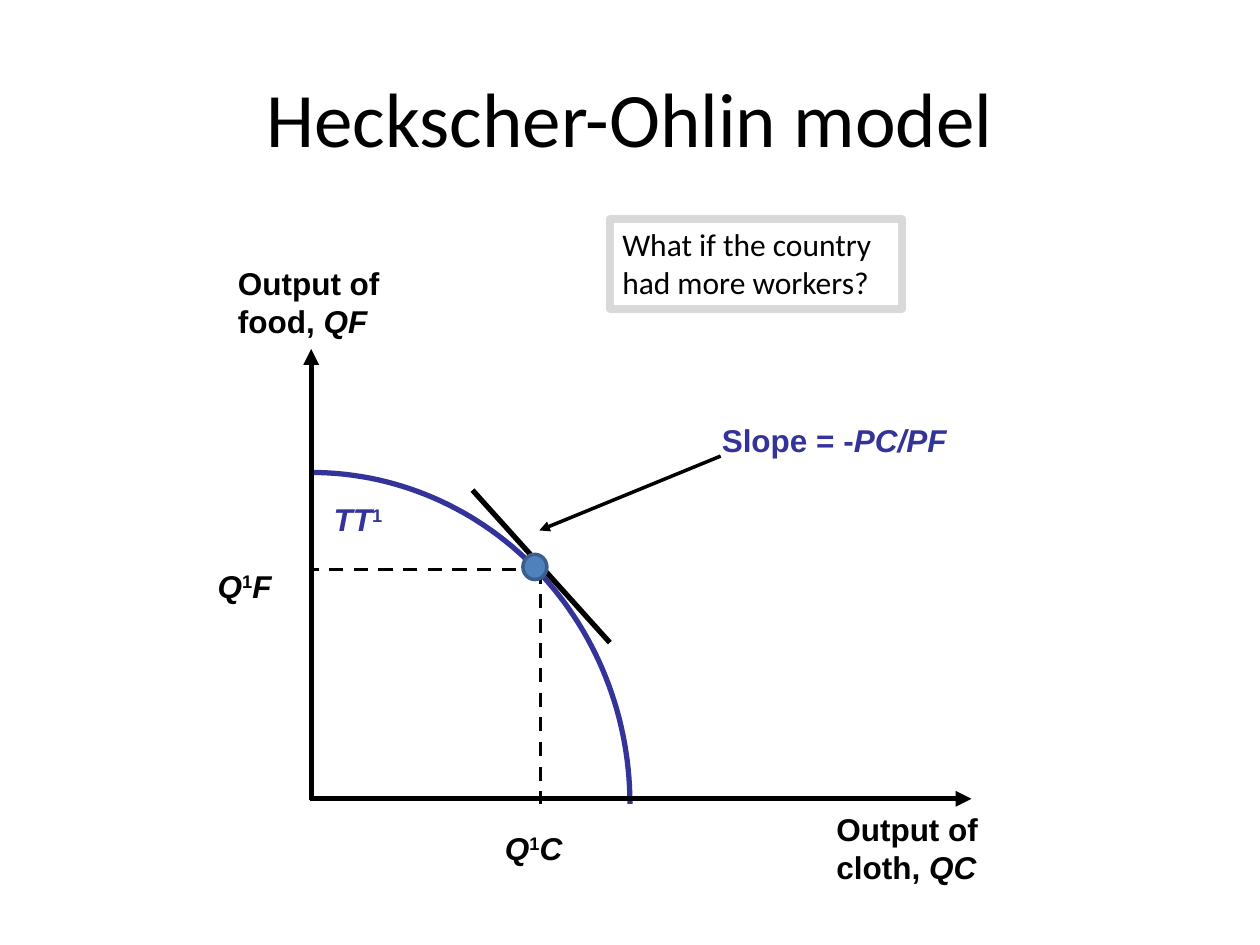
import math
from dataclasses import dataclass

from pptx import Presentation
from pptx import util as u
from pptx.dml.color import RGBColor
from pptx.enum import dml, shapes, text
from pptx.oxml import ns, xmlchemy

BLACK = RGBColor(0x00, 0x00, 0x00)
INDIGO = RGBColor(0x33, 0x33, 0x99)
BLUE = RGBColor(0x4F, 0x81, 0xBD)
DARK_BLUE = RGBColor(0x3A, 0x5F, 0x8C)
GREY = RGBColor(0xD9, 0xD9, 0xD9)

ORIGIN_X, ORIGIN_Y = 2.47, 6.34
CURVE_WIDTH, CURVE_HEIGHT, CURVE_BASE = 2.53, 2.63, 6.38
CURVE_SEGMENTS = 60
OPTIMUM_X, OPTIMUM_Y = 4.29, 4.52


@dataclass(frozen=True)
class Part:
    words: str
    italic: bool = False
    superscript: bool = False


@dataclass(frozen=True)
class Label:
    box: tuple[float, float, float, float]
    lines: tuple[tuple[Part, ...], ...]
    color: RGBColor = BLACK
    wrap: bool = True
    font: str = "Arial"
    bold: bool = True


@dataclass(frozen=True)
class Line:
    start: tuple[float, float]
    end: tuple[float, float]
    width: float
    arrow: bool = False
    dashed: bool = False


ONE = Part("1", superscript=True)

LABELS = (
    Label((2.55, 3.92, 0.6, 0.4), ((Part("TT", True), ONE),), INDIGO, wrap=False),
    Label((1.79, 2.05, 1.42, 0.7),
          ((Part("Output of"),), (Part("food, "), Part("QF", True)))),
    Label((6.54, 6.38, 1.5, 0.7),
          ((Part("Output of"),), (Part("cloth, "), Part("QC", True)))),
    Label((5.63, 3.29, 2.22, 0.4),
          ((Part("Slope = -"), Part("PC/PF", True)),), INDIGO),
    Label((1.63, 4.45, 0.67, 0.4), ((Part("Q", True), ONE, Part("F", True)),)),
    Label((3.91, 6.53, 0.76, 0.4), ((Part("Q", True), ONE, Part("C", True)),)),
)

QUESTION = Label((4.84, 1.74, 2.32, 0.71),
                 ((Part("What if the country had more workers?"),),),
                 font="Calibri", bold=False)

LINES = (
    Line((ORIGIN_X, 6.35), (ORIGIN_X, 2.77), 3, arrow=True),
    Line((2.46, ORIGIN_Y), (7.71, ORIGIN_Y), 3, arrow=True),
    Line((5.72, 3.62), (4.28, 4.21), 2, arrow=True),
    Line((OPTIMUM_X, OPTIMUM_Y), (OPTIMUM_X, CURVE_BASE), 2, dashed=True),
    Line((OPTIMUM_X, OPTIMUM_Y), (2.49, OPTIMUM_Y), 2, dashed=True),
    Line((3.75, 3.89), (4.84, 5.1), 3),
)


def inches(*lengths: float) -> list[u.Length]:
    return [u.Inches(length) for length in lengths]


def draw_title(slide, words: str) -> None:
    title = slide.shapes.title
    title.left, title.top, title.width, title.height = inches(0.5, 0.3, 9, 1.25)
    title.text_frame.text = words
    title.text_frame.vertical_anchor = text.MSO_ANCHOR.MIDDLE
    paragraph = title.text_frame.paragraphs[0]
    paragraph.alignment = text.PP_ALIGN.CENTER
    paragraph.font.name = "Calibri"
    paragraph.font.size = u.Pt(44)
    paragraph.font.color.rgb = BLACK


def draw_label(slide, label: Label):
    shape = slide.shapes.add_textbox(*inches(*label.box))
    frame = shape.text_frame
    frame.word_wrap = label.wrap
    frame.auto_size = text.MSO_AUTO_SIZE.SHAPE_TO_FIT_TEXT
    for index, parts in enumerate(label.lines):
        paragraph = frame.add_paragraph() if index else frame.paragraphs[0]
        paragraph.font.name = label.font
        paragraph.font.size = u.Pt(18)
        paragraph.font.bold = label.bold
        paragraph.font.color.rgb = label.color
        for part in parts:
            run = paragraph.add_run()
            run.text = part.words
            run.font.italic = part.italic
            if part.superscript:
                run._r.get_or_add_rPr().set("baseline", "30000")
    return shape


def draw_line(slide, line: Line) -> None:
    connector = slide.shapes.add_connector(
        shapes.MSO_CONNECTOR.STRAIGHT, *inches(*line.start, *line.end))
    connector.line.color.rgb = BLACK
    connector.line.width = u.Pt(line.width)
    if line.dashed:
        connector.line.dash_style = dml.MSO_LINE.DASH
    if line.arrow:
        tail = xmlchemy.OxmlElement("a:tailEnd")
        tail.set("type", "triangle")
        connector._element.spPr.find(ns.qn("a:ln")).append(tail)
    connector._element.spPr.append(xmlchemy.OxmlElement("a:effectLst"))


def draw_frontier(slide) -> None:
    angles = [math.pi / 2 * step / CURVE_SEGMENTS for step in range(CURVE_SEGMENTS + 1)]
    points = [(u.Inches(ORIGIN_X + CURVE_WIDTH * math.sin(angle)),
               u.Inches(CURVE_BASE - CURVE_HEIGHT * math.cos(angle)))
              for angle in angles]
    builder = slide.shapes.build_freeform(*points[0])
    builder.add_line_segments(points[1:], close=False)
    curve = builder.convert_to_shape()
    curve.shadow.inherit = False
    curve.fill.background()
    curve.line.color.rgb = INDIGO
    curve.line.width = u.Pt(3)


def draw_optimum(slide) -> None:
    dot = slide.shapes.add_shape(
        shapes.MSO_SHAPE.OVAL, *inches(4.15, 4.4, 0.19, 0.2))
    dot.shadow.inherit = False
    dot.fill.solid()
    dot.fill.fore_color.rgb = BLUE
    dot.line.color.rgb = DARK_BLUE
    dot.line.width = u.Pt(2)


def main() -> None:
    presentation = Presentation()
    presentation.slide_width, presentation.slide_height = inches(10, 7.5)
    slide = presentation.slides.add_slide(
        presentation.slide_layouts.get_by_name("Title Only"))
    draw_title(slide, "Heckscher-Ohlin model")
    draw_frontier(slide)
    for label in LABELS:
        draw_label(slide, label)
    for line in LINES:
        draw_line(slide, line)
    draw_optimum(slide)
    question = draw_label(slide, QUESTION)
    question.line.color.rgb = GREY
    question.line.width = u.Pt(4.5)
    presentation.save("out.pptx")


if __name__ == "__main__":
    main()
